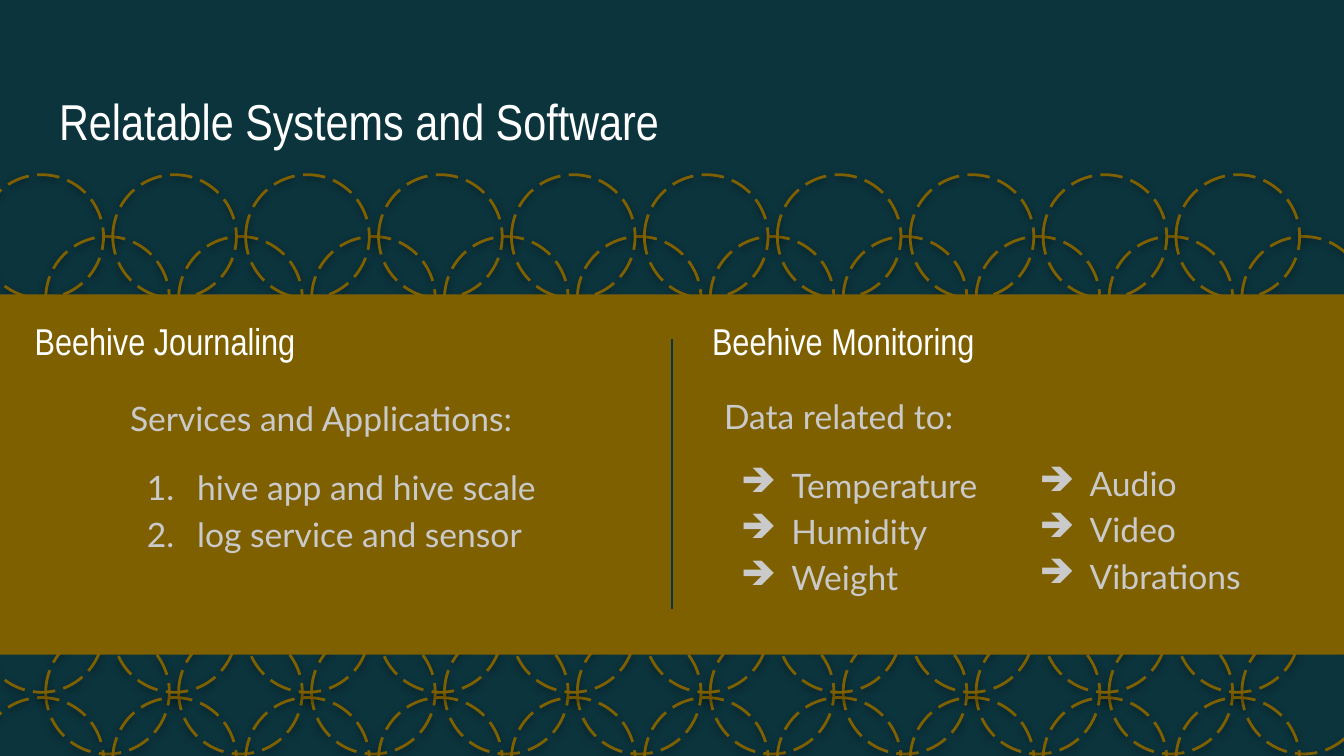
import pptx
import pptx.util
import pptx.dml.color
import pptx.enum.dml
import pptx.enum.shapes
import pptx.enum.text
import pptx.oxml
import pptx.oxml.ns

Pt = pptx.util.Pt
RGB = pptx.dml.color.RGBColor
SHAPE = pptx.enum.shapes.MSO_SHAPE

TEAL = RGB(0x0C, 0x34, 0x3D)
GOLD = RGB(0x7F, 0x60, 0x00)
WHITE = RGB(0xFF, 0xFF, 0xFF)
GREY = RGB(0xCA, 0xCA, 0xCA)
HEAD, BODY = "Arial Narrow", "Lato"
NS = pptx.oxml.ns.nsdecls("a")

# Content: boxes are left, top, width, height in points
TITLE = ("Relatable Systems and Software", (24.5, 41, 449.3, 45.4))
HEADS = [
    ("Beehive Journaling", (11.5, 163.4, 160.6, 38.9)),
    ("Beehive Monitoring", (374.4, 163.4, 160.6, 38.9)),
]
NUMBER = '<a:buAutoNum %s type="arabicPeriod"/>' % NS
ARROW = '<a:buChar %s char="➔"/>' % NS
LISTS = [
    ("Services and Applications:",
     ["hive app and hive scale", "log service and sensor"],
     NUMBER, (62.6, 203, 256.3, 102.2)),
    ("Data related to:", ["Temperature", "Humidity", "Weight"],
     ARROW, (380.9, 201.6, 160.6, 135.4)),
    (None, ["Audio", "Video", "Vibrations"],
     ARROW, (540.7, 237.6, 146.9, 86.4)),
]

# Ring pattern: first left edge and top of each row
RINGS = [(24.5, 126.7), (-10.8, 93.6), (24.5, 337.7),
         (-10.8, 373.7), (-10.8, 304.6)]
COUNT, STEP, SIZE = 10, 71.2, 66.24
SHADOW = (
    '<a:effectLst %s><a:outerShdw blurRad="57150" dist="19050" dir="5400000"'
    ' algn="bl" rotWithShape="0"><a:srgbClr val="000000">'
    '<a:alpha val="50000"/></a:srgbClr></a:outerShdw></a:effectLst>' % NS)
BAND = (0, 157.7, 720, 193)
RULE = (360, 181.4, 360, 326.2)


def pts(box):
    return [Pt(n) for n in box]


def write(para, text, size=18, font=BODY, color=GREY,
          space=None, before=0, bullet=None):
    run = para.add_run()
    run.text = text
    run.font.size = Pt(size)
    run.font.name = font
    run.font.color.rgb = color
    para.alignment = pptx.enum.text.PP_ALIGN.LEFT
    para.space_before = Pt(before)
    if space:
        para.line_spacing = space
    if bullet:
        props = para._p.get_or_add_pPr()
        props.set("marL", str(Pt(36)))
        props.set("indent", str(Pt(-27)))
        props.append(pptx.oxml.parse_xml(bullet))


def frame(shape):
    text = shape.text_frame
    text.word_wrap = True
    text.auto_size = pptx.enum.text.MSO_AUTO_SIZE.NONE
    text.vertical_anchor = pptx.enum.text.MSO_ANCHOR.TOP
    text.margin_left = text.margin_right = Pt(7.2)
    text.margin_top = text.margin_bottom = Pt(7.2)
    return text


def main():
    deck = pptx.Presentation()
    deck.slide_width, deck.slide_height = Pt(720), Pt(405)
    slide = deck.slides.add_slide(deck.slide_layouts[5])
    shapes = slide.shapes
    slide.background.fill.solid()
    slide.background.fill.fore_color.rgb = TEAL

    # Title
    text, box = TITLE
    title = shapes.title
    title.left, title.top, title.width, title.height = pts(box)
    write(frame(title).paragraphs[0], text, size=27, font=HEAD, color=WHITE)

    # Rows of dashed rings
    for left, top in RINGS:
        for i in range(COUNT):
            ring = shapes.add_shape(
                SHAPE.OVAL, *pts((left + i * STEP, top, SIZE, SIZE)))
            ring.fill.background()
            ring.line.color.rgb = GOLD
            ring.line.width = Pt(1.5)
            ring.line.dash_style = pptx.enum.dml.MSO_LINE.LONG_DASH
            ring._element.spPr.append(pptx.oxml.parse_xml(SHADOW))

    # Band and the rule between its halves
    band = shapes.add_shape(SHAPE.RECTANGLE, *pts(BAND))
    band.shadow.inherit = False
    band.fill.solid()
    band.fill.fore_color.rgb = GOLD
    band.line.fill.background()
    rule = shapes.add_connector(
        pptx.enum.shapes.MSO_CONNECTOR.STRAIGHT, *pts(RULE))
    rule.line.color.rgb = TEAL
    rule.line.width = Pt(1.5)
    rule._element.spPr.append(
        pptx.oxml.parse_xml("<a:effectLst %s/>" % NS))

    # Headings
    for text, box in HEADS:
        body = frame(shapes.add_textbox(*pts(box)))
        write(body.paragraphs[0], text, size=20, font=HEAD, color=WHITE)

    # Lists, each with an optional lead line
    for lead, items, bullet, box in LISTS:
        body = frame(shapes.add_textbox(*pts(box)))
        para = body.paragraphs[0]
        if lead:
            write(para, lead, space=1.15)
        for i, item in enumerate(items):
            if lead or i:
                para = body.add_paragraph()
            write(para, item, space=1.15, bullet=bullet,
                  before=12 if lead and i == 0 else 0)

    deck.save("out.pptx")


if __name__ == "__main__":
    main()
